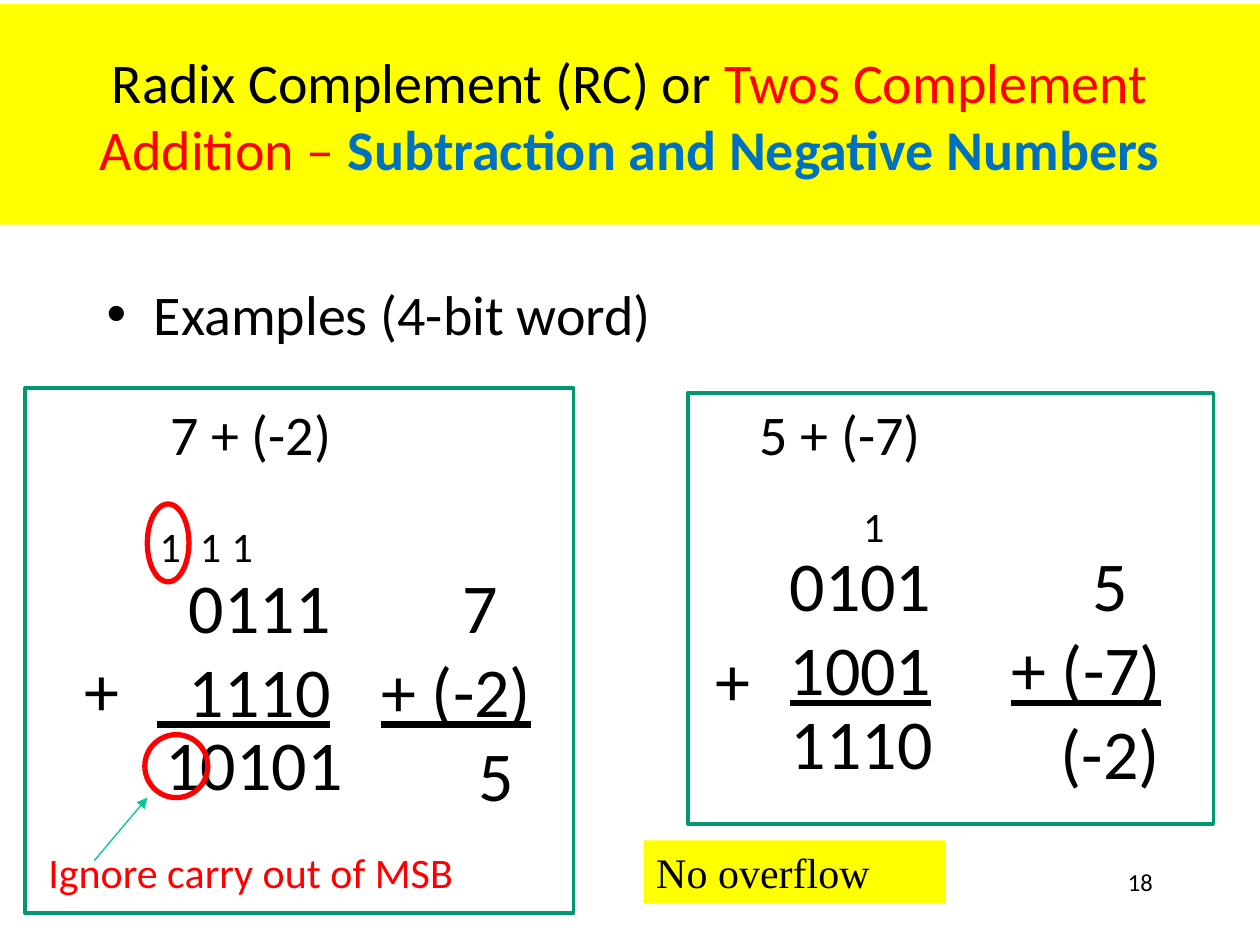
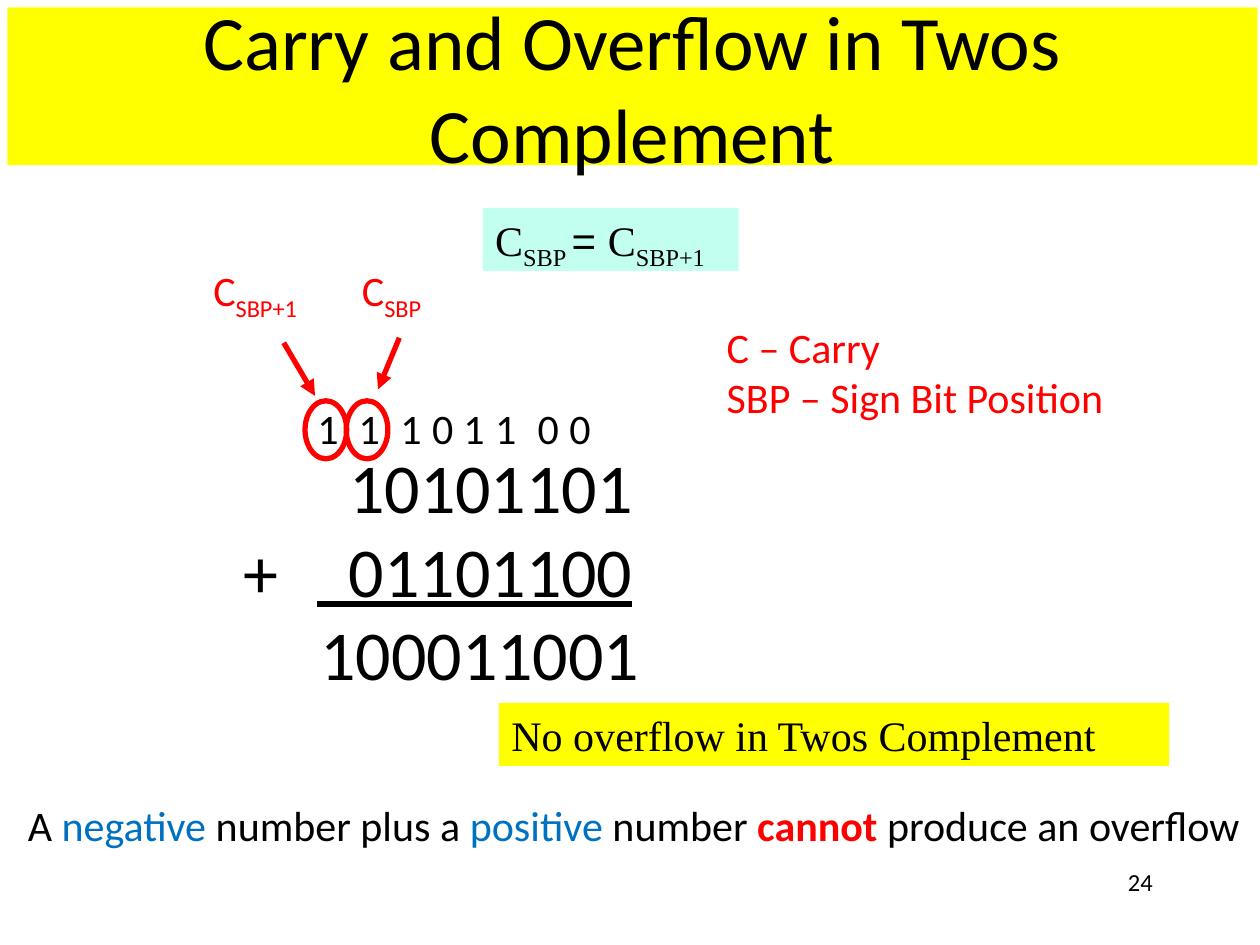
import pptx
import pptx.dml.color
import pptx.enum.shapes
import pptx.enum.text
import pptx.oxml.ns
import pptx.util
from lxml import etree

Cm = pptx.util.Cm
Align = pptx.enum.text.PP_ALIGN
Shapes = pptx.enum.shapes.MSO_SHAPE
AutoSize = pptx.enum.text.MSO_AUTO_SIZE

COLORS = {
    "black": "000000",
    "yellow": "FFFF00",
    "red": "FF0000",
    "blue": "0070C0",
    "green": "009771",
    "mint": "00C896",
    "pale": "C2FFF0",
}
BODY_FONT = "Calibri"
NOTE_FONT = "Times New Roman"
TITLE_ONLY = 5
SPACE_WIDTH = 0.32


def color(name):
    return pptx.dml.color.RGBColor.from_string(COLORS[name])


def add_xml(parent, tag, **attributes):
    return etree.SubElement(parent, pptx.oxml.ns.qn(tag), **attributes)


def format_span(span, size=24, font=BODY_FONT, ink="black", bold=False, underline=False, subscript=False):
    span.font.size = pptx.util.Pt(size)
    span.font.name = font
    span.font.color.rgb = color(ink)
    span.font.bold = bold
    span.font.underline = underline
    if subscript:
        span.font._element.set("baseline", "-25000")


def write_text(frame, paragraphs, align=Align.LEFT, indents=(), **style):
    for index, spans in enumerate(paragraphs):
        para = frame.paragraphs[0] if index == 0 else frame.add_paragraph()
        para.alignment = align
        if index < len(indents):
            para._p.get_or_add_pPr().set("marL", str(Cm(indents[index])))
        for item in [spans] if isinstance(spans, (str, tuple)) else spans:
            text, changes = (item, {}) if isinstance(item, str) else item
            span = para.add_run()
            span.text = text
            format_span(span, **{**style, **changes})


def add_text(slide, place, *paragraphs, wrap=False, fill=None, **style):
    box = slide.shapes.add_textbox(*map(Cm, place))
    box.text_frame.word_wrap = wrap
    box.text_frame.auto_size = AutoSize.NONE if wrap else AutoSize.SHAPE_TO_FIT_TEXT
    if fill:
        box.fill.solid()
        box.fill.fore_color.rgb = color(fill)
    write_text(box.text_frame, paragraphs, **style)
    return box


def add_outline(slide, kind, place, ink, width):
    outline = slide.shapes.add_shape(kind, *map(Cm, place))
    outline.shadow.inherit = False
    outline.fill.background()
    outline.line.color.rgb = color(ink)
    outline.line.width = pptx.util.Pt(width)


def add_ring(slide, *place):
    add_outline(slide, Shapes.OVAL, place, "red", 3)


def add_arrow(slide, start, end, ink="red", width=3):
    arrow = slide.shapes.add_connector(
        pptx.enum.shapes.MSO_CONNECTOR.STRAIGHT, *map(Cm, start + end))
    arrow.line.color.rgb = color(ink)
    arrow.line.width = pptx.util.Pt(width)
    add_xml(arrow.line._get_or_add_ln(), "a:tailEnd", type="triangle")
    add_xml(arrow._element.spPr, "a:effectLst")


def add_page(deck, place, title_spans, size, number):
    slide = deck.slides.add_slide(deck.slide_layouts[TITLE_ONLY])
    title = slide.shapes.title
    title.left, title.top, title.width, title.height = map(Cm, place)
    title.fill.solid()
    title.fill.fore_color.rgb = color("yellow")
    title.text_frame.auto_size = AutoSize.NONE
    title.text_frame.word_wrap = True
    title.text_frame.vertical_anchor = pptx.enum.text.MSO_ANCHOR.MIDDLE
    write_text(title.text_frame, [title_spans], align=Align.CENTER, size=size)
    add_text(slide, (18.21, 17.35, 5.28, 1.27), number, wrap=True, align=Align.RIGHT, size=14)
    return slide


def add_bullet(slide, place, text, size):
    box = add_text(slide, place, text, wrap=True, size=size)
    properties = box.text_frame.paragraphs[0]._p.get_or_add_pPr()
    properties.set("marL", str(Cm(0.95)))
    properties.set("indent", str(-Cm(0.95)))
    add_xml(properties, "a:buFont", typeface="Arial")
    add_xml(properties, "a:buChar", char="•")


def add_carries(slide, digits, lefts, top):
    for digit, left in zip(digits, lefts):
        add_text(slide, (left, top, 0.94, 1.28), digit)


def add_binary_sum(slide, first, second, total, operands, plus, result):
    lead = len(second) - len(second.lstrip())
    add_text(slide, operands, first, (second, {"underline": True}),
             indents=[lead * SPACE_WIDTH], size=40)
    add_text(slide, plus + (1.22, 1.96), "+", size=40)
    add_text(slide, result, total, wrap=True, align=Align.RIGHT, size=40)


def add_decimal_sum(slide, left, top, first, second, total, indents):
    add_text(slide, (left, top, 3.56, 5.38), first, (second, {"underline": True}), total,
             align=Align.CENTER, indents=indents, size=40)


def add_example(slide, frame, heading, heading_left):
    add_outline(slide, Shapes.RECTANGLE, frame, "green", 2)
    add_text(slide, (heading_left, 7.92, 3.81, 1.63), heading, align=Align.CENTER, size=32)


def build_examples(deck):
    slide = add_page(deck, (0, 0.08, 25.4, 4.45), [
        "Radix Complement (RC) or ",
        ("Twos Complement Addition – ", {"ink": "red"}),
        ("Subtraction and Negative Numbers", {"ink": "blue", "bold": True}),
    ], 32, "18")
    add_bullet(slide, (1.9, 5.51, 21.59, 11.43), "Examples (4-bit word)", 32)

    add_example(slide, (0.51, 7.82, 11.05, 10.59), "7 + (-2)", 3.15)
    add_carries(slide, "111", (2.97, 3.78, 4.42), 10.36)
    add_binary_sum(slide, "0111", "  1110", "10101", operands=(2.92, 11.23, 4.04, 4.78),
                   plus=(1.45, 12.9), result=(2.08, 14.4, 5.08, 1.96))
    add_decimal_sum(slide, 7.42, 11.23, "7", "+ (-2)", "5", (0.96, 0, 1.6))
    add_ring(slide, 2.97, 10.16, 0.84, 1.57)
    add_ring(slide, 2.92, 14.81, 1.27, 1.27)
    add_text(slide, (0.61, 16.94, 8.89, 1.27), "Ignore carry out of MSB",
             align=Align.CENTER, ink="red")
    add_arrow(slide, (1.9, 17.35), (2.97, 16.08), ink="mint", width=0.75)

    add_example(slide, (13.87, 7.92, 10.59, 8.69), "5 + (-7)", 15.04)
    add_carries(slide, "1", (17.15,), 9.96)
    add_binary_sum(slide, "0101", "1001", "1110", operands=(15.67, 10.8, 3.4, 4.83),
                   plus=(14.17, 12.7), result=(14.4, 13.97, 4.65, 1.96))
    add_decimal_sum(slide, 20.12, 10.8, "5", "+ (-7)", "(-2)", (0.96, 0, 0.96))
    add_text(slide, (12.98, 16.94, 6.07, 1.27), "No overflow",
             wrap=True, fill="yellow", font=NOTE_FONT)


def build_carry_rule(deck):
    slide = add_page(deck, (0.15, 0.15, 25.2, 3.18),
                     ["Carry and Overflow in Twos Complement"], 44, "24")
    subscript = {"subscript": True}
    add_text(slide, (9.73, 4.19, 5.16, 1.27),
             ["C", ("SBP ", subscript), ("= ", {"font": "Arial"}), "C", ("SBP+1", subscript)],
             fill="pale", font=NOTE_FONT)
    for left, width, name in ((3.94, 2.41, "SBP+1"), (6.98, 1.83, "SBP")):
        add_text(slide, (left, 5.21, width, 1.27), ["C", (name, subscript)],
                 align=Align.CENTER, ink="red")
    add_arrow(slide, (5.72, 6.91), (6.35, 7.98))
    add_arrow(slide, (8.05, 6.81), (7.62, 7.85))
    add_text(slide, (14.4, 6.35, 8.18, 2.31), "C – Carry", "SBP – Sign Bit Position", ink="red")

    carry_lefts = (6.15, 6.98, 7.82, 8.46, 9.09, 9.73, 10.59, 11.23)
    add_carries(slide, "11101100", carry_lefts, 7.98)
    for left in carry_lefts[:2]:
        add_ring(slide, left, 8.08, 0.84, 1.17)
    add_binary_sum(slide, "10101101", "  01101100", "100011001", operands=(6.15, 8.81, 6.86, 4.78),
                   plus=(4.65, 10.52), result=(4.88, 12.19, 8.26, 1.96))

    add_text(slide, (10.06, 14.17, 13.51, 1.27), "No overflow in Twos Complement",
             wrap=True, fill="yellow", font=NOTE_FONT)
    add_text(slide, (0.2, 16, 25.15, 1.27), [
        "A ", ("negative", {"ink": "blue"}), " number plus a ", ("positive", {"ink": "blue"}),
        " number ", ("cannot", {"ink": "red", "bold": True}), " produce an overflow",
    ], align=Align.CENTER)


def main():
    deck = pptx.Presentation()
    deck.slide_width, deck.slide_height = Cm(25.4), Cm(19.05)
    build_examples(deck)
    build_carry_rule(deck)
    deck.save("out.pptx")


if __name__ == "__main__":
    main()
